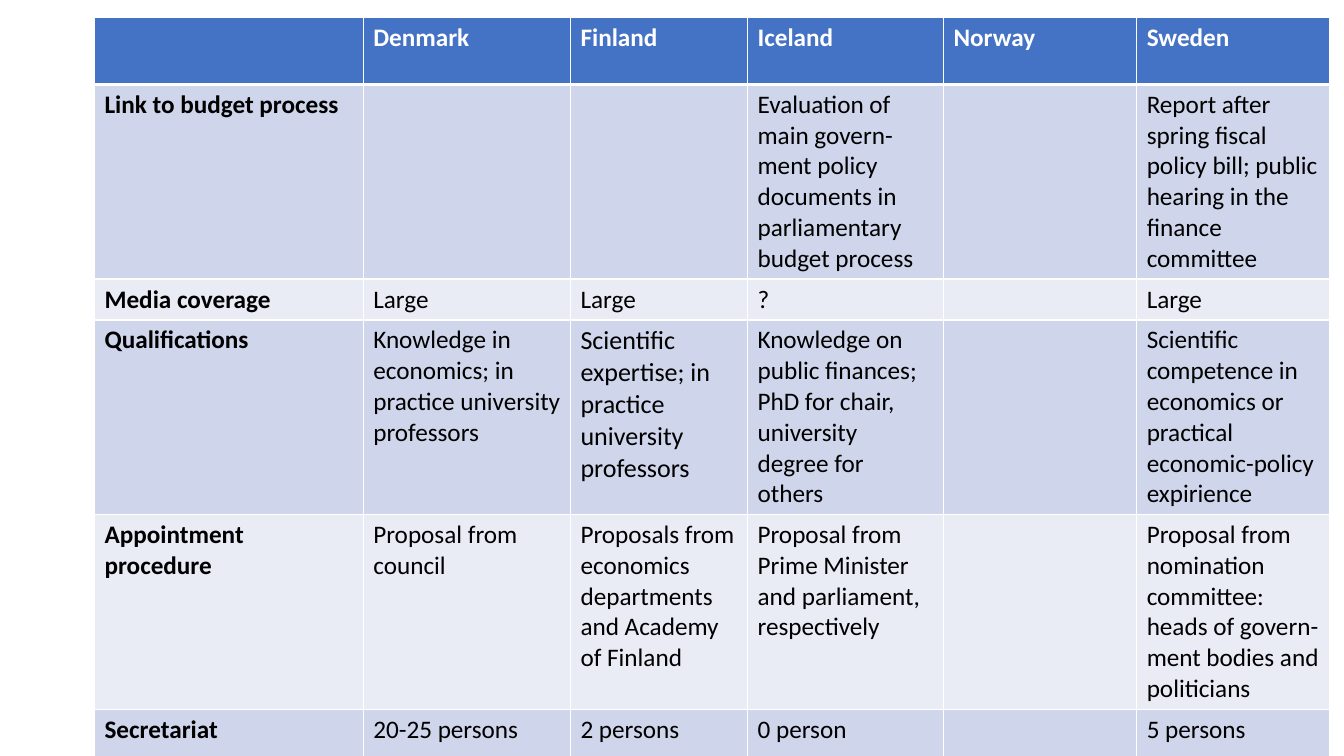
import pptx
import pptx.util
import pptx.dml.color
from lxml import etree
from pptx.oxml.ns import qn

Pt = pptx.util.Pt
RGBColor = pptx.dml.color.RGBColor

# Content: header first, one tuple per row
ROWS = [
    ("", "Denmark", "Finland", "Iceland", "Norway", "Sweden"),
    ("Link to budget process", "", "",
     "Evaluation of main govern-ment policy documents in parliamentary budget process", "",
     "Report after spring fiscal policy bill; public hearing in the finance committee"),
    ("Media coverage", "Large", "Large", "?", "", "Large"),
    ("Qualifications",
     "Knowledge in economics; in practice university professors",
     "Scientific expertise; in practice university professors",
     "Knowledge on public finances; PhD for chair, university degree for others", "",
     "Scientific competence in economics or practical economic-policy expirience"),
    ("Appointment procedure",
     "Proposal from council",
     "Proposals from economics departments and Academy of Finland",
     "Proposal from Prime Minister and parliament, respectively", "",
     "Proposal from nomination committee: heads of govern-ment bodies and politicians"),
    ("Secretariat", "20-25 persons", "2 persons", "0 person", "", "5 persons"),
]
COLUMN_WIDTHS = [192, 148, 126.5, 140, 138, 138]
ROW_HEIGHTS = [48, 139, 29.2, 139, 139, 48]
TABLE_LEFT, TABLE_TOP = 67.5, 12.3
FONT = "Calibri"
TEXT_SIZE = 18
SPECIAL_SIZES = {(3, 2): 18.6}

WHITE = RGBColor(0xFF, 0xFF, 0xFF)
BLACK = RGBColor(0x00, 0x00, 0x00)
HEADER_BLUE = RGBColor(0x44, 0x72, 0xC4)
BAND_DARK = RGBColor(0xCF, 0xD5, 0xEA)
BAND_LIGHT = RGBColor(0xE9, 0xEB, 0xF5)


def write_text(cell, text, *, size, color, bold):
    paragraph = cell.text_frame.paragraphs[0]
    paragraph.font.size = Pt(size)
    if text:
        run = paragraph.add_run()
        run.text = text
        run.font.name = FONT
        run.font.size = Pt(size)
        run.font.bold = bold
        run.font.color.rgb = color


def set_borders(cell, widths):
    """Draw white borders; widths maps each side (L, R, T, B) to points."""
    properties = cell._tc.get_or_add_tcPr()
    for position, side in enumerate("LRTB"):
        line = etree.Element(qn(f"a:ln{side}"), w=str(Pt(widths[side])))
        fill = etree.SubElement(line, qn("a:solidFill"))
        etree.SubElement(fill, qn("a:srgbClr"), val=str(WHITE))
        properties.insert(position, line)


# Slide
presentation = pptx.Presentation()
presentation.slide_width = Pt(960)
presentation.slide_height = Pt(540)
slide = presentation.slides.add_slide(presentation.slide_layouts[6])

# Table grid
table = slide.shapes.add_table(
    len(ROWS), len(COLUMN_WIDTHS), Pt(TABLE_LEFT), Pt(TABLE_TOP),
    Pt(sum(COLUMN_WIDTHS)), Pt(sum(ROW_HEIGHTS))).table
for column, width in zip(table.columns, COLUMN_WIDTHS):
    column.width = Pt(width)
for row, height in zip(table.rows, ROW_HEIGHTS):
    row.height = Pt(height)

# Cells: blue header, then alternating bands with bold row labels
for row_index, texts in enumerate(ROWS):
    is_header = row_index == 0
    band = HEADER_BLUE if is_header else BAND_DARK if row_index % 2 else BAND_LIGHT
    borders = {"L": 1, "R": 1,
               "T": 3 if row_index == 1 else 1,
               "B": 3 if is_header else 1}
    for column_index, text in enumerate(texts):
        cell = table.cell(row_index, column_index)
        cell.fill.solid()
        cell.fill.fore_color.rgb = band
        set_borders(cell, borders)
        write_text(cell, text,
                   size=SPECIAL_SIZES.get((row_index, column_index), TEXT_SIZE),
                   color=WHITE if is_header else BLACK,
                   bold=is_header or column_index == 0)

presentation.save("out.pptx")
